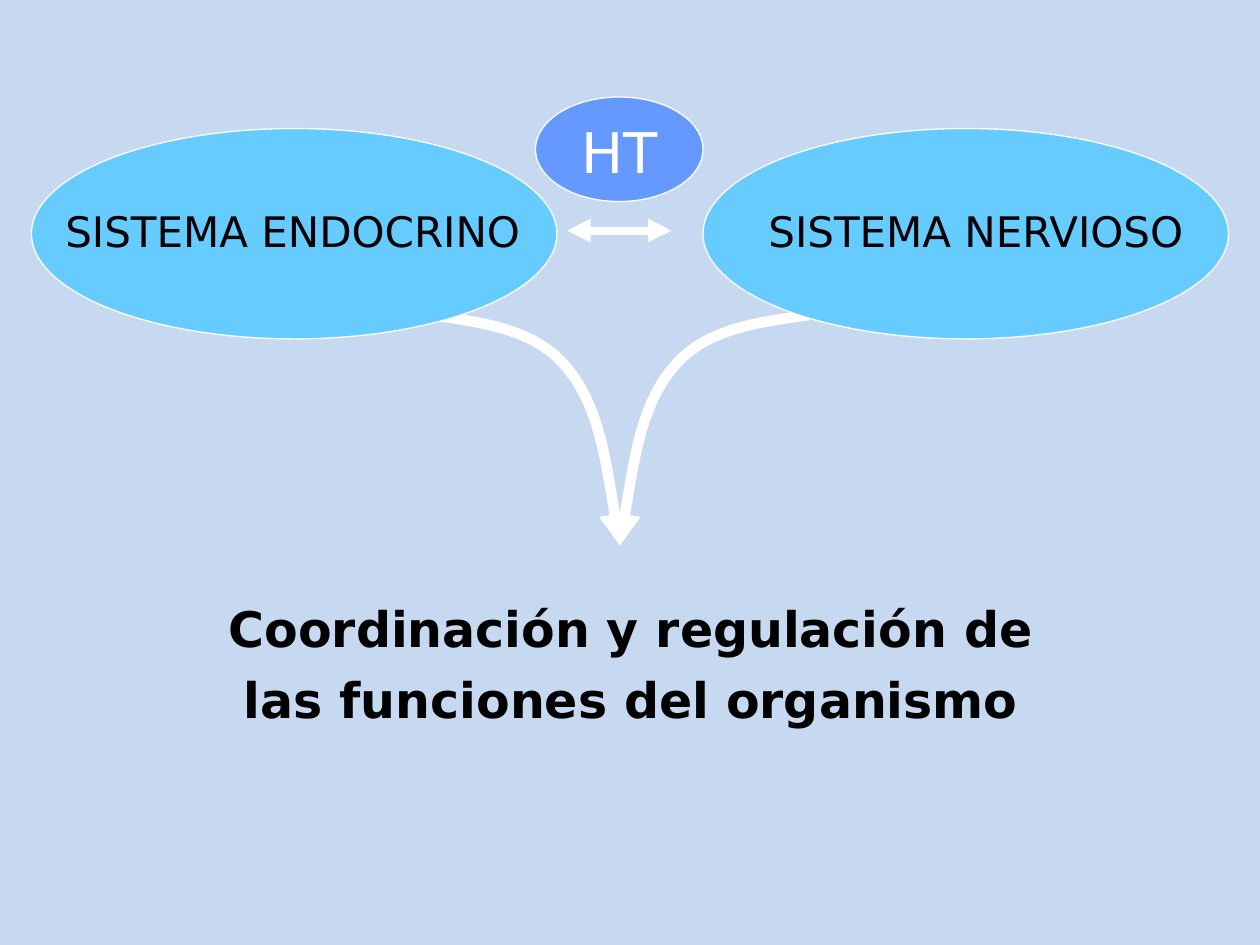
from dataclasses import dataclass

from lxml.etree import SubElement
from pptx import Presentation
from pptx.dml.color import RGBColor as Rgb
from pptx.enum.shapes import MSO_CONNECTOR as Conn, MSO_SHAPE as Kind
from pptx.enum.text import MSO_AUTO_SIZE as Fit, PP_ALIGN as Align
from pptx.oxml.ns import qn
from pptx.util import Inches, Pt

COLORS = {"back": "C6D9F1", "system": "66CCFF", "hub": "6699FF",
          "white": "FFFFFF", "black": "000000"}
FONT = "DejaVu Sans"
MID = 4.92  # where both curves meet

Point = tuple[float, float]
Box = tuple[float, float, float, float]


@dataclass
class Label:
    text: str
    box: Box
    size: int
    color: str = "black"
    bold: bool = False
    wrap: bool = False
    align: Align = Align.LEFT
    space: float = 1.0


@dataclass
class Oval:
    box: Box
    fill: str
    label: Label


OVALS = [
    Oval((0.25, 1.02, 4.17, 1.67), "system",
         Label("SISTEMA ENDOCRINO", (0.42, 1.58, 3.97, 0.51), 24)),
    Oval((5.58, 1.02, 4.17, 1.67), "system",
         Label("SISTEMA NERVIOSO", (6, 1.58, 3.65, 0.5), 24)),
    Oval((4.25, 0.77, 1.33, 0.83), "hub",
         Label("HT", (4.52, 0.88, 0.81, 0.63), 32, "white")),
]
RESULT = Label("Coordinación y regulación de las funciones del organismo",
               (1.67, 4.61, 6.67, 1.17), 28, bold=True, wrap=True,
               align=Align.CENTER, space=1.2)
# Offset from the middle and height: a start, then two Bézier triples
CURVE = [(1.5, 2.5), (1.09, 2.56), (0.67, 2.61), (0.42, 2.92),
         (0.17, 3.22), (0.09, 3.78), (0, 4.33)]


def color(name: str) -> Rgb:
    return Rgb.from_string(COLORS[name])


def stroke(shape, width: float, ends: tuple[str, ...] = ()) -> None:
    """Give a white line, with arrowheads at the named ends."""
    shape.line.color.rgb = color("white")
    shape.line.width = Pt(width)
    for end in ends:
        SubElement(shape.line._get_or_add_ln(), qn(f"a:{end}"), type="triangle")


def add_label(slide, label: Label) -> None:
    frame = slide.shapes.add_textbox(*map(Inches, label.box)).text_frame
    frame.word_wrap = label.wrap
    frame.auto_size = Fit.SHAPE_TO_FIT_TEXT
    para = frame.paragraphs[0]
    para.alignment = label.align
    para.line_spacing = label.space
    run = para.add_run()
    run.text = label.text
    style = {"name": FONT, "size": Pt(label.size), "bold": label.bold}
    for key, value in style.items():
        setattr(run.font, key, value)
    run.font.color.rgb = color(label.color)


def add_oval(slide, oval: Oval) -> None:
    shape = slide.shapes.add_shape(Kind.OVAL, *map(Inches, oval.box))
    shape.shadow.inherit = False
    shape.fill.solid()
    shape.fill.fore_color.rgb = color(oval.fill)
    stroke(shape, 0.75)
    add_label(slide, oval.label)


def add_curve(slide, points: list[Point]) -> None:
    """Draw a path, then turn each three line steps into one Bézier step."""
    spots = [(Inches(x), Inches(y)) for x, y in points]
    pen = slide.shapes.build_freeform(*spots[0])
    pen.add_line_segments(spots[1:], close=False)
    shape = pen.convert_to_shape()
    shape.shadow.inherit = False
    shape.fill.background()
    stroke(shape, 6, ("tailEnd",))
    steps = list(shape._element.iter(qn("a:lnTo")))
    route = steps[0].getparent()
    for i in range(0, len(steps), 3):
        bend = SubElement(route, qn("a:cubicBezTo"))
        for step in steps[i:i + 3]:
            bend.append(step[0])
            route.remove(step)


def add_arrow(slide, start: Point, end: Point) -> None:
    arrow = slide.shapes.add_connector(
        Conn.STRAIGHT, *map(Inches, (*start, *end)))
    stroke(arrow, 4.5, ("headEnd", "tailEnd"))
    SubElement(arrow._element.spPr, qn("a:effectLst"))


def main() -> None:
    deck = Presentation()
    deck.slide_width, deck.slide_height = Inches(10), Inches(7.5)
    slide = deck.slides.add_slide(deck.slide_layouts[6])
    slide.background.fill.solid()
    slide.background.fill.fore_color.rgb = color("back")
    for side in (-1, 1):
        add_curve(slide, [(MID + side * dx, y) for dx, y in CURVE])
    add_arrow(slide, (4.5, 1.83), (5.33, 1.83))
    for oval in OVALS:
        add_oval(slide, oval)
    add_label(slide, RESULT)
    deck.save("out.pptx")


if __name__ == "__main__":
    main()
